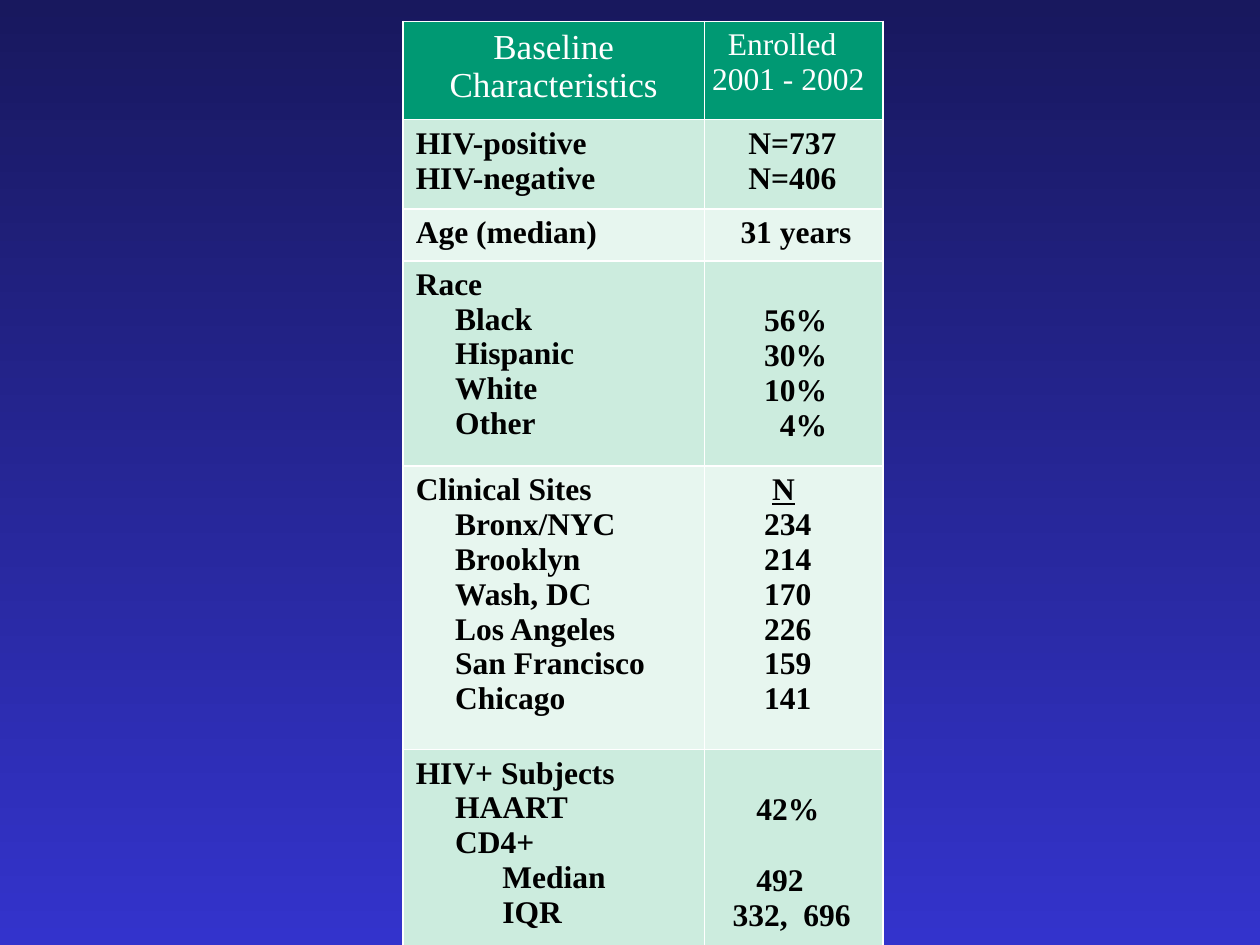
from dataclasses import dataclass

import pptx
import pptx.dml.color
import pptx.enum.text
import pptx.oxml
import pptx.oxml.ns
import pptx.util
from pptx.dml.color import RGBColor
from pptx.util import Inches

WHITE = RGBColor(0xFF, 0xFF, 0xFF)
BLACK = RGBColor(0x00, 0x00, 0x00)
NAVY = RGBColor(0x18, 0x18, 0x5E)
BLUE = RGBColor(0x33, 0x33, 0xCC)
HEADER_GREEN = RGBColor(0x00, 0x99, 0x73)
BAND_FILLS = (RGBColor(0xCC, 0xEC, 0xDE), RGBColor(0xE7, 0xF6, 0xEF))

FONT = "Times New Roman"
BODY_SIZE = 18
INDENT_STEP = 0.0625
LINE_HEIGHT = 20.7
COLUMN_WIDTHS = (2.39, 1.42)


@dataclass(frozen=True)
class Line:
    text: str
    indent: int = 0
    skipped_lines: int = 0
    underline: bool = False


@dataclass(frozen=True)
class Row:
    height: float
    labels: list[Line]
    values: list[Line]


def indented(indent: int, *texts: str) -> list[Line]:
    return [Line(text, indent) for text in texts]


HEADER = Row(0.78, [Line("Baseline Characteristics")],
             [Line("Enrolled", 3), Line("2001 - 2002", 1)])
BODY_ROWS = [
    Row(0.71, indented(0, "HIV-positive", "HIV-negative"),
        indented(4, "N=737", "N=406")),
    Row(0.41, [Line("Age (median)")], [Line("31 years", 3)]),
    Row(1.63, [Line("Race"), *indented(5, "Black", "Hispanic", "White", "Other")],
        [Line("56%", 6, skipped_lines=1), *indented(6, "30%", "10%"), Line("4%", 8)]),
    Row(2.25,
        [Line("Clinical Sites"),
         *indented(5, "Bronx/NYC", "Brooklyn", "Wash, DC", "Los Angeles",
                   "San Francisco", "Chicago")],
        [Line("N", 7, underline=True),
         *indented(6, "234", "214", "170", "226", "159", "141")]),
    Row(1.63,
        [Line("HIV+ Subjects"), *indented(5, "HAART", "CD4+"),
         *indented(11, "Median", "IQR")],
        [Line("42%", 5, skipped_lines=1), Line("492", 5, skipped_lines=1),
         Line("332,  696", 2)]),
]


def add_borders(cell, color: RGBColor, width: float) -> None:
    properties = cell._tc.get_or_add_tcPr()
    for side in ("lnL", "lnR", "lnT", "lnB"):
        properties.append(pptx.oxml.parse_xml(
            f'<a:{side} {pptx.oxml.ns.nsdecls("a")} w="{pptx.util.Pt(width)}">'
            f'<a:solidFill><a:srgbClr val="{color}"/></a:solidFill></a:{side}>'))


def fill_cell(cell, lines: list[Line], fill: RGBColor, color: RGBColor,
              size: float = BODY_SIZE, bold: bool = False) -> None:
    add_borders(cell, WHITE, 1)
    cell.fill.solid()
    cell.fill.fore_color.rgb = fill
    # Lines skipped above the first one become top margin.
    cell.margin_top = Inches(0.05) + pptx.util.Pt(LINE_HEIGHT * lines[0].skipped_lines)
    cell.text_frame.text = "\n".join(line.text for line in lines)
    for number, (line, paragraph) in enumerate(zip(lines, cell.text_frame.paragraphs)):
        properties = paragraph._p.get_or_add_pPr()
        properties.set("marL", str(Inches(line.indent * INDENT_STEP)))
        properties.set("indent", "0")
        if number and line.skipped_lines:
            paragraph.space_before = pptx.util.Pt(LINE_HEIGHT * line.skipped_lines)
        font = paragraph.runs[0].font
        font.name = FONT
        font.size = pptx.util.Pt(size)
        font.bold = bold
        font.underline = line.underline
        font.color.rgb = color


def set_background(slide) -> None:
    fill = slide.background.fill
    fill.gradient()
    fill.gradient_angle = 270
    for stop, color in zip(fill.gradient_stops, (NAVY, BLUE)):
        stop.color.rgb = color


def add_characteristics_table(slide) -> None:
    rows = [HEADER, *BODY_ROWS]
    table = slide.shapes.add_table(
        len(rows), len(COLUMN_WIDTHS), Inches(3.2), Inches(0.17),
        Inches(sum(COLUMN_WIDTHS)), Inches(sum(row.height for row in rows))).table
    table.horz_banding = False
    table.first_row = False
    for column, width in zip(table.columns, COLUMN_WIDTHS):
        column.width = Inches(width)
    for table_row, row in zip(table.rows, rows):
        table_row.height = Inches(row.height)

    title_cell, period_cell = table.rows[0].cells
    fill_cell(title_cell, HEADER.labels, HEADER_GREEN, WHITE, size=20)
    title_cell.text_frame.paragraphs[0].alignment = pptx.enum.text.PP_ALIGN.CENTER
    fill_cell(period_cell, HEADER.values, HEADER_GREEN, WHITE)
    period_cell.margin_left = period_cell.margin_right = 0

    for number, row in enumerate(BODY_ROWS):
        fill = BAND_FILLS[number % 2]
        for column, lines in enumerate((row.labels, row.values)):
            fill_cell(table.cell(number + 1, column), lines, fill, BLACK, bold=True)


def main() -> None:
    presentation = pptx.Presentation()
    presentation.slide_width = Inches(10)
    presentation.slide_height = Inches(7.5)
    slide = presentation.slides.add_slide(presentation.slide_layouts[6])
    set_background(slide)
    add_characteristics_table(slide)
    presentation.save("out.pptx")


if __name__ == "__main__":
    main()
